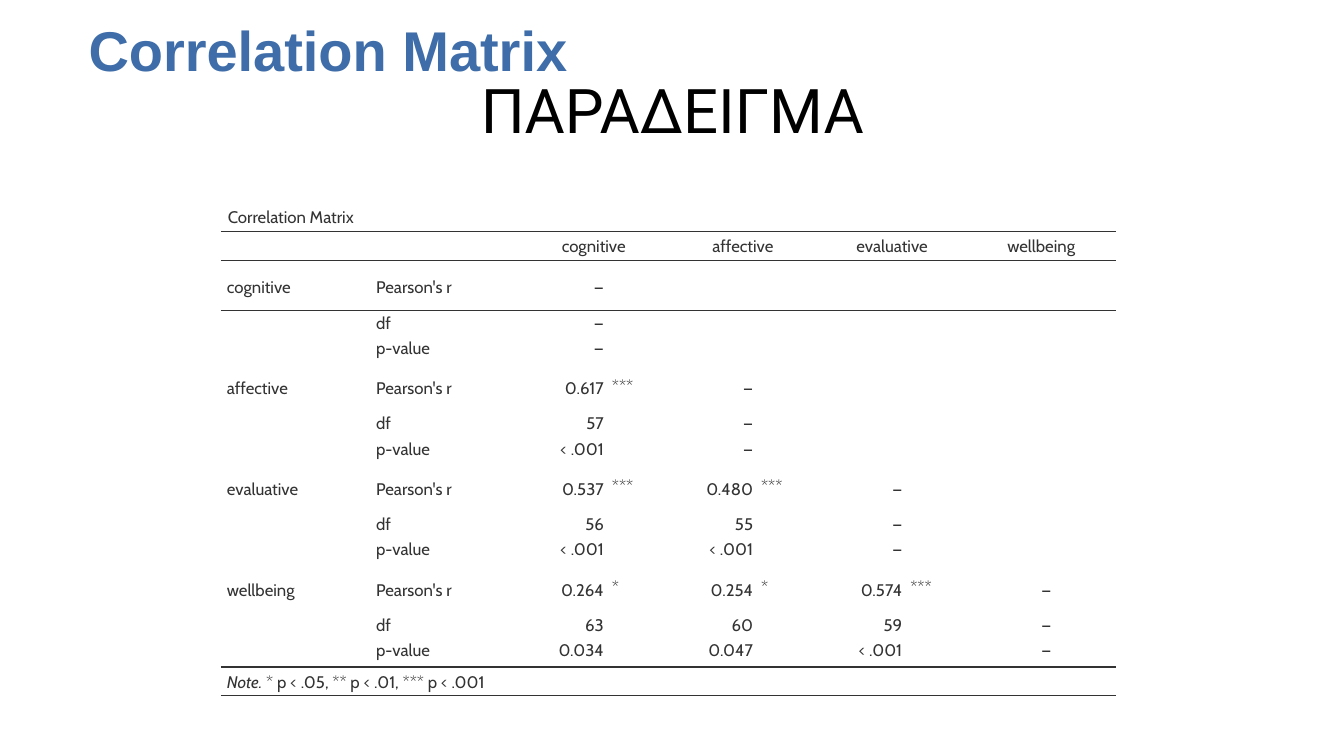
from dataclasses import dataclass

from lxml.etree import SubElement
from pptx import Presentation
from pptx.dml.color import RGBColor as RGB
from pptx.enum.text import MSO_ANCHOR as ANCHOR, PP_ALIGN as ALIGN
from pptx.oxml.ns import qn
from pptx.util import Inches, Pt


@dataclass(frozen=True)
class Theme:
    black: str = "000000"
    blue: str = "3E6DA9"
    ink: str = "333333"
    title_font: str = "Roboto"
    heading_font: str = "Arial"
    table_font: str = "Cabin"
    title_size: int = 44
    heading_size: int = 40
    table_size: int = 12
    thin: float = 0.75
    thick: float = 1.5
    plain_table: str = "{2D5ABB26-0587-4C30-8999-92F81FD0307C}"


THEME = Theme()
VARIABLES = ["cognitive", "affective", "evaluative", "wellbeing"]
STATISTICS = ["Pearson's r", "df", "p-value"]
RESULTS = {
    "cognitive": [],
    "affective": [("0.617", "57", "< .001", "***")],
    "evaluative": [("0.537", "56", "< .001", "***"),
                   ("0.480", "55", "< .001", "***")],
    "wellbeing": [("0.264", "63", "0.034", "*"),
                  ("0.254", "60", "0.047", "*"),
                  ("0.574", "59", "< .001", "***")],
}
DIAGONAL = ("—", "—", "—", "")
ROW_HEIGHTS = [0.28, 0.28] + [0.5, 0.25, 0.25] * 3 + [0.5, 0.25, 0.29, 0.28, 0.25]
COLUMN_WIDTHS = [0.91, 0.57] * 6
NOTE_ROW = 14
RULES = {1: THEME.thin, 2: THEME.thin, NOTE_ROW: THEME.thick}


def style_run(r, font, size, color, bold=False, italic=False):
    r.font.name = font
    r.font.size = Pt(size)
    r.font.color.rgb = RGB.from_string(color)
    r.font.bold = bold
    r.font.italic = italic


def place(sp, box):
    sp.left, sp.top, sp.width, sp.height = [Inches(v) for v in box]


def set_margins(target, left, top, right, bottom):
    target.margin_left, target.margin_top = Inches(left), Inches(top)
    target.margin_right, target.margin_bottom = Inches(right), Inches(bottom)


def add_title(slide, box, text):
    sp = slide.shapes.title
    place(sp, box)
    tf = sp.text_frame
    tf.text = text
    tf.vertical_anchor = ANCHOR.MIDDLE
    p = tf.paragraphs[0]
    p.alignment = ALIGN.CENTER
    p.line_spacing = 0.9
    style_run(p.runs[0], THEME.title_font, THEME.title_size, THEME.black)


def add_heading(slide, box, text):
    sp = slide.shapes.add_textbox(*[Inches(v) for v in box])
    tf = sp.text_frame
    tf.word_wrap = True
    set_margins(tf, 0.1, 0.14, 0.1, 0.09)
    tf.text = text
    style_run(tf.paragraphs[0].runs[0], THEME.heading_font, THEME.heading_size,
              THEME.blue, bold=True)


def write(cell, text, margins, align=ALIGN.LEFT):
    cell.text_frame.text = text
    set_margins(cell, *margins)
    p = cell.text_frame.paragraphs[0]
    p.alignment = align
    for r in p.runs:
        style_run(r, THEME.table_font, THEME.table_size, THEME.ink)


def draw_rule(cell, edge, width):
    tc_pr = cell._tc.get_or_add_tcPr()
    ln = SubElement(tc_pr, qn("a:" + edge), w=str(Pt(width)))
    fill = SubElement(ln, qn("a:solidFill"))
    SubElement(fill, qn("a:srgbClr"), val=THEME.ink)


def prepare_grid(table):
    for column, width in zip(table.columns, COLUMN_WIDTHS):
        column.width = Inches(width)
    for i, (row, height) in enumerate(zip(table.rows, ROW_HEIGHTS)):
        row.height = Inches(height)
        for cell in row.cells:
            set_margins(cell, 0.06, 0.01, 0.06, 0.01)
            cell.vertical_anchor = ANCHOR.MIDDLE
            for edge, k in (("lnT", i), ("lnB", i + 1)):
                if k in RULES:
                    draw_rule(cell, edge, RULES[k])
    last = len(COLUMN_WIDTHS) - 1
    for i in (0, NOTE_ROW, NOTE_ROW + 1):
        table.cell(i, 0).merge(table.cell(i, last))
    for j in range(0, last, 2):
        table.cell(1, j).merge(table.cell(1, j + 1))


def fill_results(table):
    for g, variable in enumerate(VARIABLES):
        write(table.cell(1, 4 + 2 * g), variable, (0.06, 0.03, 0.06, 0.03), ALIGN.CENTER)
        top = 2 + 3 * g
        pairs = RESULTS[variable] + [DIAGONAL]
        for s, statistic in enumerate(STATISTICS):
            i = top + s
            margins = (0.06, 0.06 if s == 0 else 0.01,
                       0.07, 0.06 if i == NOTE_ROW - 1 else 0.01)
            if s == 0:
                write(table.cell(i, 0), variable, margins)
            write(table.cell(i, 2), statistic, margins)
            for k, pair in enumerate(pairs):
                write(table.cell(i, 4 + 2 * k), pair[s], margins, ALIGN.RIGHT)
        for k, pair in enumerate(RESULTS[variable]):
            write(table.cell(top, 5 + 2 * k), pair[3], (0.01, 0.01, 0.06, 0.01))


def add_correlation_table(slide, box, caption, note_label, note):
    frame = slide.shapes.add_table(len(ROW_HEIGHTS), len(COLUMN_WIDTHS),
                                   *[Inches(v) for v in box])
    table = frame.table
    table.first_row = False
    table.horz_banding = False
    table._tbl.tblPr.find(qn("a:tableStyleId")).text = THEME.plain_table
    prepare_grid(table)
    write(table.cell(0, 0), caption, (0.07, 0.03, 0.06, 0.03))
    fill_results(table)
    cell = table.cell(NOTE_ROW, 0)
    write(cell, note_label, (0.06, 0.04, 0.06, 0.01))
    p = cell.text_frame.paragraphs[0]
    p.runs[0].font.italic = True
    r = p.add_run()
    r.text = note
    style_run(r, THEME.table_font, THEME.table_size, THEME.ink)
    for cell in table.iter_cells():
        p = cell.text_frame.paragraphs[0]
        if not p.runs:
            SubElement(p._p, qn("a:endParaRPr"), sz=str(THEME.table_size * 100))


def main():
    prs = Presentation()
    prs.slide_width, prs.slide_height = Inches(13.33), Inches(7.5)
    slide = prs.slides.add_slide(prs.slide_layouts[5])
    add_title(slide, (0.92, 0.4, 11.5, 1.45), "ΠΑΡΑΔΕΙΓΜΑ")
    add_correlation_table(slide, (2.19, 2.02, 8.88, 5.13), "Correlation Matrix",
                          "Note.", " * p < .05, ** p < .01, *** p < .001")
    add_heading(slide, (0.78, 0.01, 12.5, 1.29), "Correlation Matrix")
    prs.save("out.pptx")


if __name__ == "__main__":
    main()
